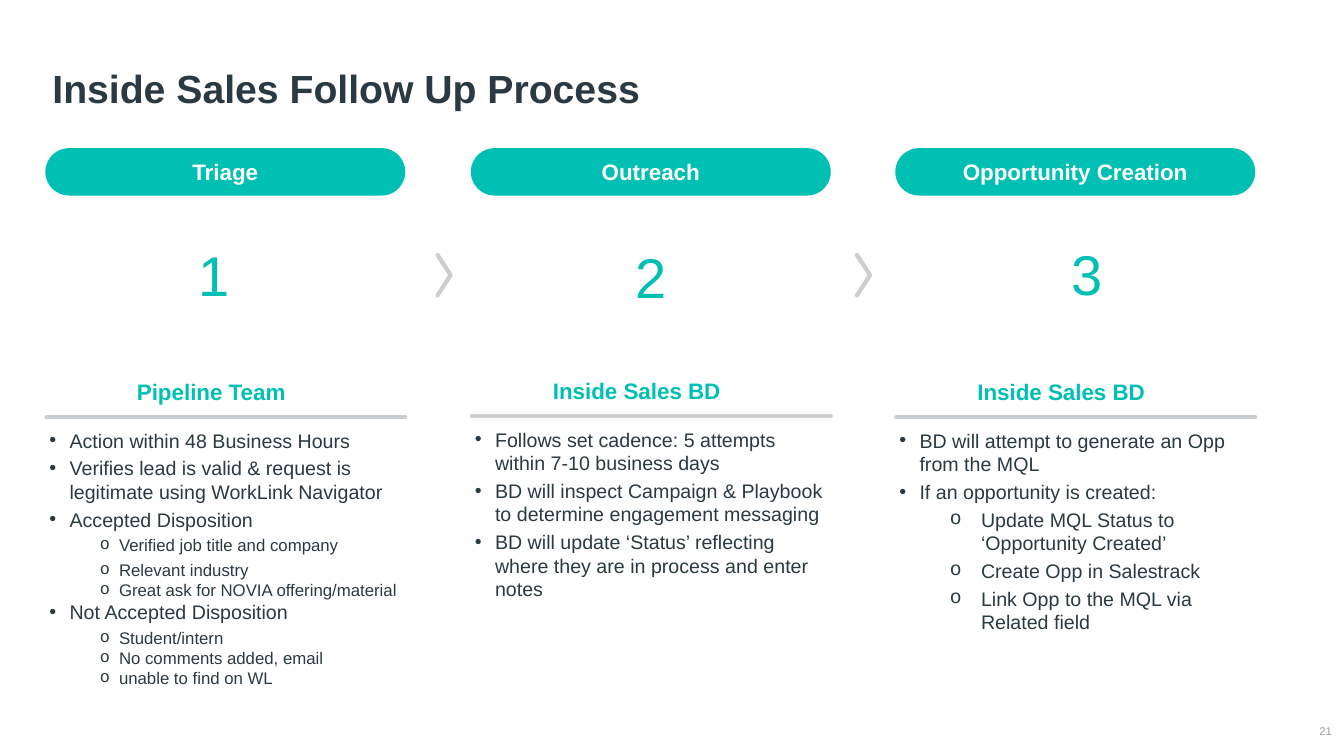
from lxml import etree
from pptx import Presentation
from pptx import util as u
from pptx.dml.color import RGBColor
from pptx.enum import shapes, text
from pptx.oxml.ns import qn

PX = 9144
COLORS = {"teal": "00BFB3", "ink": "2B3A42", "rule": "CACED0", "muted": "959CA0", "white": "FFFFFF"}

# level, left margin, hanging indent, size, space after, bullet, bullet font
LIST_STYLES = {
    "main": (0, 20, 20, 14, 3, "•", "Arial"),
    "detail": (1, 69, 19, 12, 0, "o", "Courier New"),
    "spaced detail": (1, 69, 19, 12, 3, "o", "Courier New"),
    "step": (1, 81, 31, 14, 3, "o", "Courier New"),
}

STAGES = [
    {"name": "Triage", "team": "Pipeline Team", "left": 45, "rule_top": 414,
     "number_top": 234, "list_size": (353, 295), "body": 1, "items": [
         ("main", "Action within 48 Business Hours"),
         ("main", "Verifies lead is valid & request is legitimate using WorkLink Navigator"),
         ("main", "Accepted Disposition"),
         ("spaced detail", "Verified job title and company"),
         ("detail", "Relevant industry"),
         ("detail", "Great ask for NOVIA offering/material"),
         ("main", "Not Accepted Disposition"),
         ("detail", "Student/intern"),
         ("detail", "No comments added, email"),
         ("detail", "unable to find on WL")]},
    {"name": "Outreach", "team": "Inside Sales BD", "left": 467, "rule_top": 413,
     "number_top": 236, "list_size": (353, 208), "body": 2, "items": [
         ("main", "Follows set cadence: 5 attempts within 7-10 business days"),
         ("main", "BD will inspect Campaign & Playbook to determine engagement messaging"),
         ("main", "BD will update ‘Status’ reflecting where they are in process and enter notes")]},
    {"name": "Opportunity Creation", "team": "Inside Sales BD", "left": 888, "rule_top": 414,
     "number_top": 233, "list_size": (357, 282), "body": 4, "items": [
         ("main", "BD will attempt to generate an Opp from the MQL"),
         ("main", "If an opportunity is created:"),
         ("step", "Update MQL Status to ‘Opportunity Created’"),
         ("step", "Create Opp in Salestrack"),
         ("step", "Link Opp to the MQL via Related field")]},
]


class SlideBuilder:
    font = "Arial"

    def __init__(self, slide):
        self.slide = slide

    def color(self, name):
        return RGBColor.from_string(COLORS[name])

    def place(self, shape, left, top, width, height):
        shape.left, shape.top = left * PX, top * PX
        shape.width, shape.height = width * PX, height * PX

    def frame(self, shape, anchor, inset=True, wrap=True):
        frame = shape.text_frame
        frame.auto_size = text.MSO_AUTO_SIZE.NONE
        frame.word_wrap = wrap
        frame.vertical_anchor = anchor
        if not inset:
            frame.margin_left = frame.margin_right = 0
            frame.margin_top = frame.margin_bottom = 0
        return frame

    def style(self, paragraph, size, color, bold=False, align=text.PP_ALIGN.LEFT):
        paragraph.alignment = align
        for run in paragraph.runs:
            run.font.name = self.font
            run.font.size = u.Pt(size)
            run.font.bold = bold
            run.font.color.rgb = self.color(color)

    def title(self, words, box):
        title = self.slide.shapes.title
        self.place(title, *box)
        frame = self.frame(title, text.MSO_ANCHOR.BOTTOM)
        frame.text = words
        frame.paragraphs[0].line_spacing = 0.9
        self.style(frame.paragraphs[0], 28, "ink", bold=True)

    def label(self, words, box, size, color, bold=False, align=text.PP_ALIGN.LEFT,
              anchor=text.MSO_ANCHOR.TOP, inset=False, wrap=True):
        label = self.slide.shapes.add_textbox(*(side * PX for side in box))
        frame = self.frame(label, anchor, inset, wrap)
        frame.text = words
        self.style(frame.paragraphs[0], size, color, bold, align)

    def pill(self, words, box):
        pill = self.slide.shapes.add_shape(
            shapes.MSO_SHAPE.ROUNDED_RECTANGLE, *(side * PX for side in box))
        pill.adjustments[0] = 0.5
        pill.shadow.inherit = False
        pill.fill.solid()
        pill.fill.fore_color.rgb = self.color("teal")
        pill.line.fill.background()
        frame = self.frame(pill, text.MSO_ANCHOR.MIDDLE, inset=False)
        frame.text = words
        self.style(frame.paragraphs[0], 16, "white", True, text.PP_ALIGN.CENTER)

    def stroke(self, shape):
        shape.line.color.rgb = self.color("rule")
        shape.line.width = u.Pt(3)
        outline = shape.line._get_or_add_ln()
        outline.set("cap", "rnd")
        etree.SubElement(outline, qn("a:round"))

    def rule(self, left, top, width):
        rule = self.slide.shapes.add_connector(
            shapes.MSO_CONNECTOR.STRAIGHT, left * PX, top * PX, (left + width) * PX, top * PX)
        self.stroke(rule)
        etree.SubElement(rule._element.spPr, qn("a:effectLst"))

    def chevron(self, left, top, width, height):
        outline = self.slide.shapes.build_freeform(left, top, scale=PX)
        outline.add_line_segments(
            [(left + width, top + height // 2), (left, top + height)], close=False)
        chevron = outline.convert_to_shape()
        chevron.fill.background()
        self.stroke(chevron)
        chevron.shadow.inherit = False

    def bullets(self, body_index, items, box):
        body = self.slide.placeholders[body_index]
        self.place(body, *box)
        frame = self.frame(body, text.MSO_ANCHOR.TOP, inset=False)
        frame.text = "\n".join(words for _, words in items)
        for paragraph, (kind, _) in zip(frame.paragraphs, items):
            level, margin, hanging, size, after, bullet, bullet_font = LIST_STYLES[kind]
            paragraph.level = level
            properties = paragraph._p.get_or_add_pPr()
            properties.set("marL", str(margin * PX))
            properties.set("indent", str(-hanging * PX))
            etree.SubElement(properties, qn("a:buFont"), typeface=bullet_font)
            etree.SubElement(properties, qn("a:buChar"), char=bullet)
            paragraph.space_before = u.Pt(0)
            paragraph.space_after = u.Pt(after)
            paragraph.line_spacing = 1.0
            self.style(paragraph, size, "ink")

    def remove_placeholder(self, index):
        spare = self.slide.placeholders[index]._element
        spare.getparent().remove(spare)


def main():
    deck = Presentation()
    deck.slide_width, deck.slide_height = 1333 * PX, 750 * PX
    builder = SlideBuilder(deck.slides.add_slide(deck.slide_layouts[4]))
    builder.remove_placeholder(3)
    builder.title("Inside Sales Follow Up Process", (42, 32, 1240, 84))

    for order, stage in enumerate(STAGES):
        left, rule_top = stage["left"], stage["rule_top"]
        builder.pill(stage["name"], (left, 147, 357, 47))
        builder.label(str(order + 1), (187 + 433 * order, stage["number_top"], 51, 77),
                      40, "teal", inset=True, wrap=False)
        builder.label(stage["team"], (left - 3, rule_top - 70, 335, 58), 16, "teal", True,
                      text.PP_ALIGN.CENTER, text.MSO_ANCHOR.BOTTOM)
        builder.rule(left + 1, rule_top, 356)
        builder.bullets(stage["body"], stage["items"],
                        (left + 4, rule_top + 11, *stage["list_size"]))

    for left in (434, 850):
        builder.chevron(left, 253, 13, 40)
    builder.label("21", (1282, 716, 39, 19), 8, "muted", align=text.PP_ALIGN.RIGHT,
                  anchor=text.MSO_ANCHOR.MIDDLE)
    deck.save("out.pptx")


if __name__ == "__main__":
    main()
